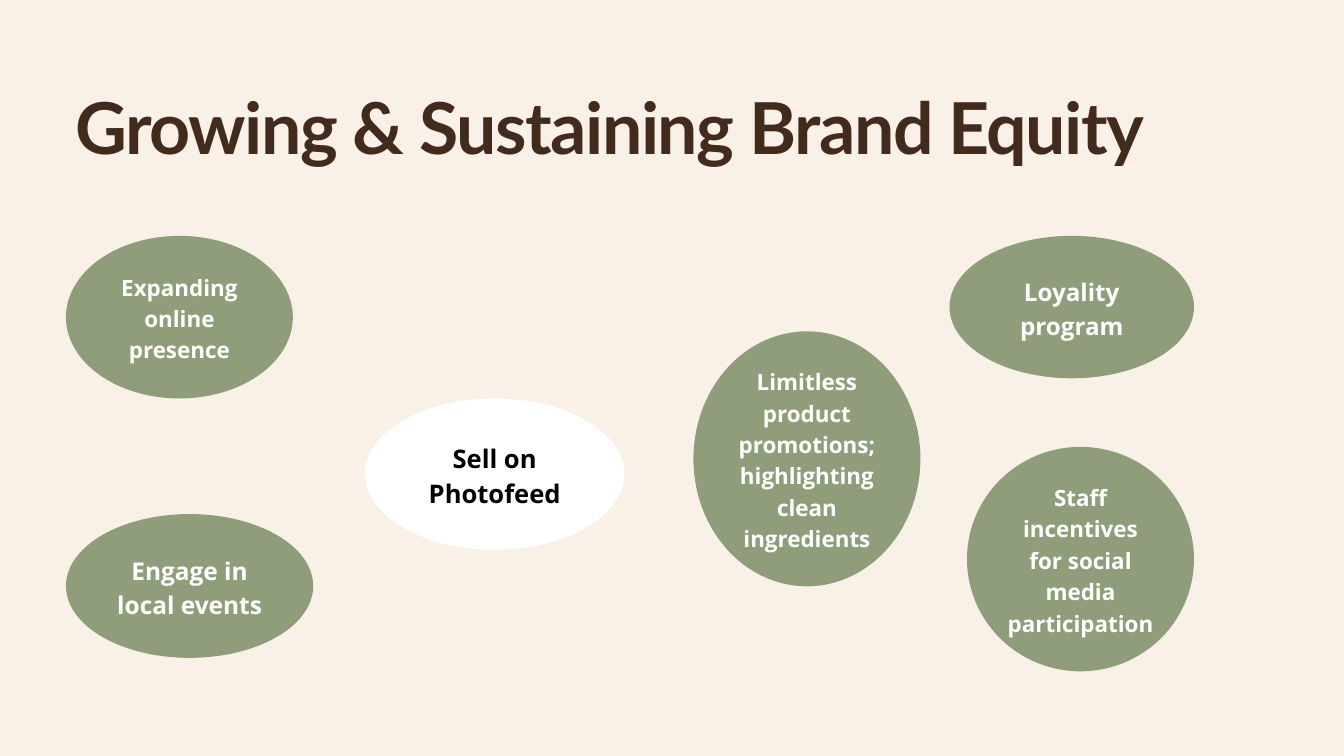
from pptx import Presentation
from pptx.dml.color import RGBColor
from pptx.enum.shapes import MSO_SHAPE
from pptx.enum.text import MSO_ANCHOR, PP_ALIGN
from pptx.util import Pt

THEME = {
    "background": "F9F1E8",
    "title": {"font": "Lato", "size": 76.7, "color": "422B1C", "tracking": -1.5},
    "idea_font": "Open Sans",
    "line_ratio": 1.4,
    "plain": {"fill": "909D7B", "text": "FFFFFF"},
    "highlight": {"fill": "FFFFFF", "text": "000000"},
}

TITLE = "Growing & Sustaining Brand Equity"
LEFT_EDGE, RIGHT_EDGE, TOP_ROW = 70.6, 1279.3, 252.7
STANDARD_WIDTH = 243.2

IDEAS = [
    ("Expanding online presence", LEFT_EDGE, TOP_ROW, STANDARD_WIDTH, 174.2, 24, "plain"),
    ("Engage in local events", LEFT_EDGE, 550.8, 265, 154.1, 26.2, "plain"),
    ("Limitless product promotions; highlighting clean ingredients",
     743, 355, STANDARD_WIDTH, 273.2, 24, "plain"),
    ("Loyality program", RIGHT_EDGE - 262, TOP_ROW, 262, 152.6, 25.9, "plain"),
    ("Staff incentives for social media participation",
     RIGHT_EDGE - STANDARD_WIDTH, 478.8, STANDARD_WIDTH, 240.5, 24, "plain"),
    ("Sell on Photofeed", 391, 427, 277.9, 162, 27.4, "highlight"),
]


def write(frame, text, font, size, color, line_height, sides=0, bottom=0):
    frame.word_wrap = True
    frame.margin_left = frame.margin_right = Pt(sides)
    frame.margin_top, frame.margin_bottom = Pt(0), Pt(bottom)
    paragraph = frame.paragraphs[0]
    paragraph.line_spacing = Pt(line_height)
    run = paragraph.add_run()
    run.text = text
    paragraph.font.name = font
    paragraph.font.size = Pt(size)
    paragraph.font.bold = True
    paragraph.font.color.rgb = RGBColor.from_string(color)
    return paragraph, run


def add_title(slide):
    style = THEME["title"]
    heading = slide.shapes.add_textbox(Pt(80.6), Pt(104.4), Pt(1278), Pt(82.8))
    _, run = write(heading.text_frame, TITLE, style["font"], style["size"],
                   style["color"], style["size"])
    run._r.get_or_add_rPr().set("spc", str(round(style["tracking"] * 100)))


def add_idea(slide, text, left, top, width, height, size, role):
    colors = THEME[role]
    bubble = slide.shapes.add_shape(
        MSO_SHAPE.OVAL, Pt(left), Pt(top), Pt(width), Pt(height))
    bubble.shadow.inherit = False
    bubble.fill.solid()
    bubble.fill.fore_color.rgb = RGBColor.from_string(colors["fill"])
    bubble.line.fill.background()
    bubble.text_frame.vertical_anchor = MSO_ANCHOR.MIDDLE
    paragraph, _ = write(bubble.text_frame, text, THEME["idea_font"], size,
                         colors["text"], size * THEME["line_ratio"], 6, 2)
    paragraph.alignment = PP_ALIGN.CENTER


def main():
    deck = Presentation()
    deck.slide_width, deck.slide_height = Pt(1440), Pt(810)
    slide = deck.slides.add_slide(deck.slide_layouts[6])
    slide.background.fill.solid()
    slide.background.fill.fore_color.rgb = RGBColor.from_string(THEME["background"])
    add_title(slide)
    for idea in IDEAS:
        add_idea(slide, *idea)
    deck.save("out.pptx")


if __name__ == "__main__":
    main()
